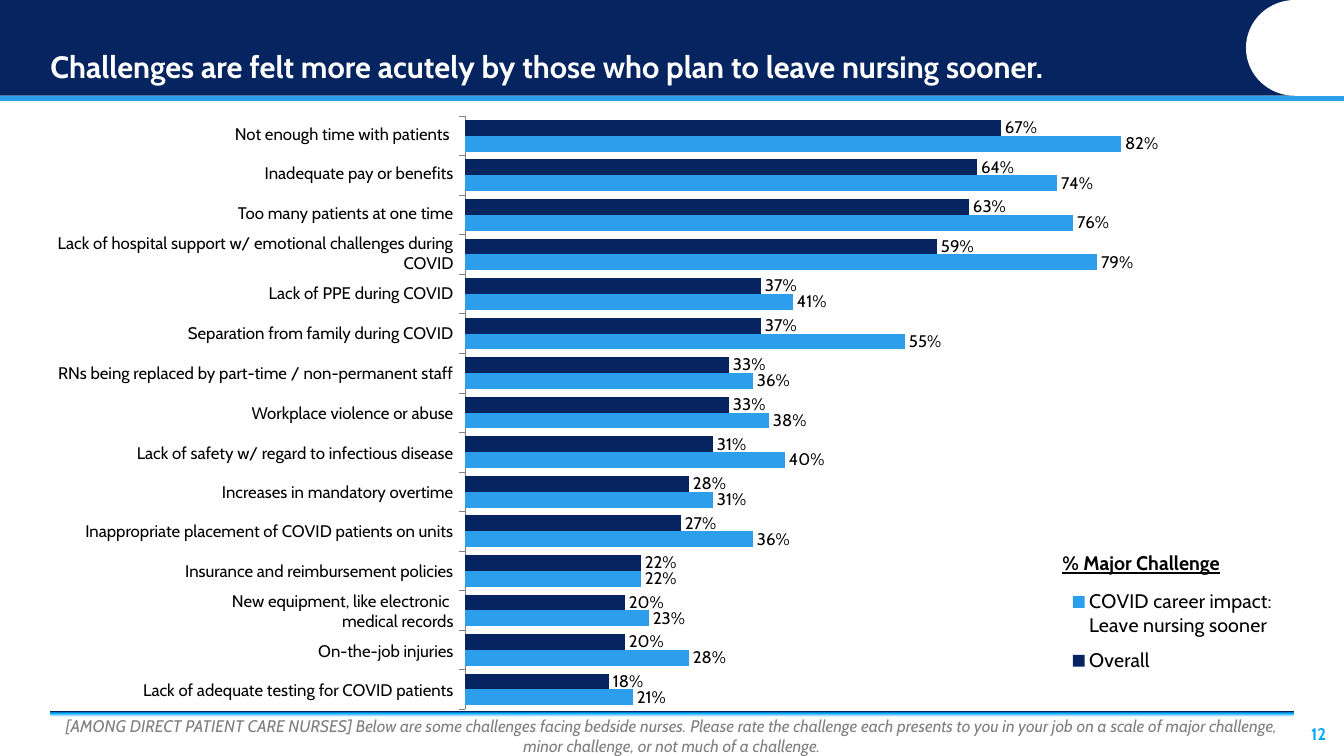
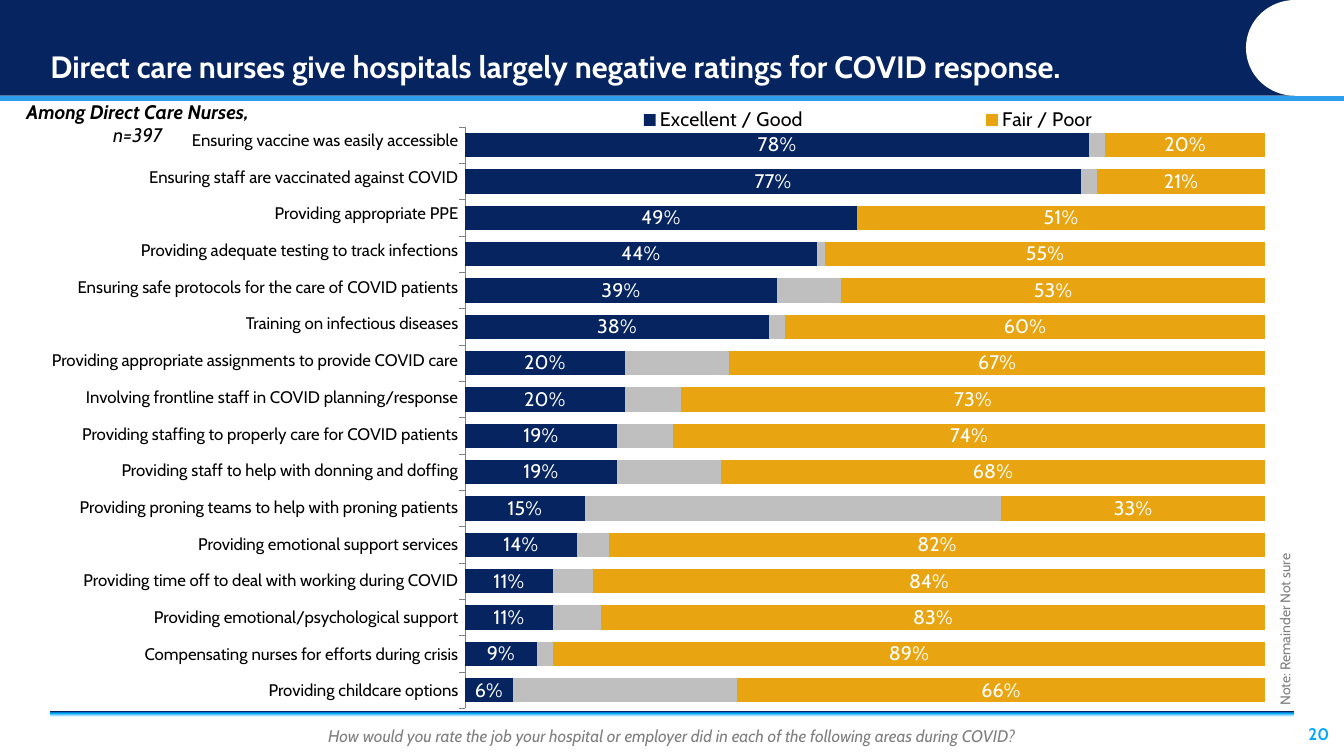
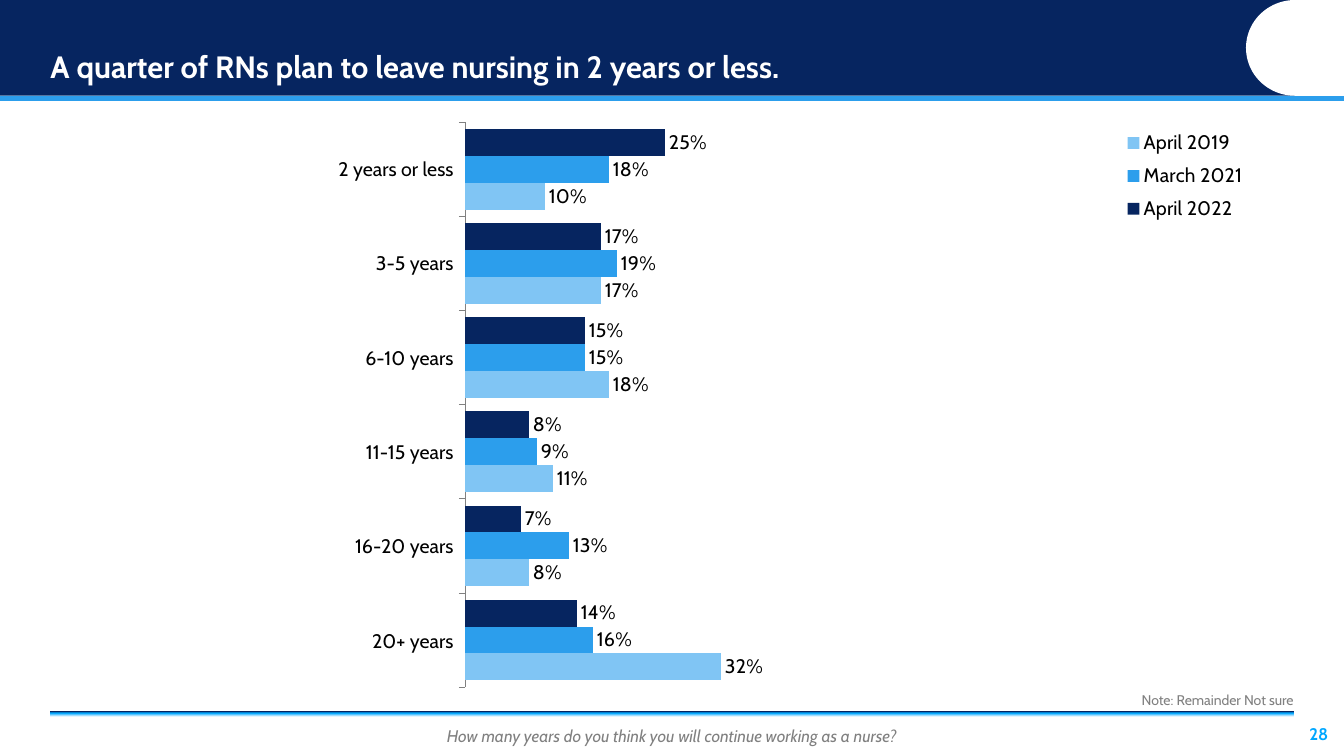
from lxml import etree
from pptx import Presentation
from pptx.chart.data import CategoryChartData
from pptx.dml.color import RGBColor
from pptx.enum import chart as ch, shapes, text
from pptx.oxml import parse_xml
from pptx.oxml.ns import nsdecls, qn
from pptx.util import Pt

FONT = "Cabin"
HUES = {
    "navy": "062560", "blue": "2C9EEC", "sky": "80C5F4", "gold": "E8A511",
    "silver": "BFBFBF", "gray": "808080", "cyan": "00A7FF", "pale": "CCEDFF",
    "white": "FFFFFF", "black": "000000",
}
RGB = {name: RGBColor.from_string(code) for name, code in HUES.items()}
FADE = [(0, "white"), (86, "white"), (88, "pale"), (94, "cyan"), (100, "navy")]
LEFT, RIGHT, MID, END = (text.PP_ALIGN.LEFT, text.PP_ALIGN.RIGHT,
                         text.PP_ALIGN.CENTER, ch.XL_LABEL_POSITION.OUTSIDE_END)


def style(frame, size, hue, align=LEFT, bold=False, italic=False,
          anchor=text.MSO_ANCHOR.MIDDLE, pads=(0, 0, 0, 0)):
    """Format a whole text frame; pads run left, top, right, bottom."""
    frame.word_wrap = True
    frame.auto_size = text.MSO_AUTO_SIZE.NONE
    frame.vertical_anchor = anchor
    (frame.margin_left, frame.margin_top,
     frame.margin_right, frame.margin_bottom) = map(Pt, pads)
    for para in frame.paragraphs:
        para.alignment = align
        font = para.font
        font.name, font.size, font.bold, font.italic = FONT, Pt(size), bold, italic
        font.color.rgb = RGB[hue]


def place(parent, index, inner, box):
    """Give a plot area or legend a fixed place, as parts of the chart."""
    for old in parent.findall(qn("c:layout")):
        parent.remove(old)
    target = '<c:layoutTarget val="inner"/>' if inner else ""
    sizes = "".join(f'<c:{key} val="{val}"/>' for key, val in zip("xywh", box))
    parent.insert(index, parse_xml(
        f'<c:layout {nsdecls("c")}><c:manualLayout>{target}<c:xMode val="edge"/>'
        f'<c:yMode val="edge"/>{sizes}</c:manualLayout></c:layout>'))


good = [78, 77, 49, 44, 39, 38, 20, 20, 19, 19, 15, 14, 11, 11, 9, 6]
poor = [20, 21, 51, 55, 53, 60, 67, 73, 74, 68, 33, 82, 84, 83, 89, 66]
rest = [100 - a - b for a, b in zip(good, poor)]

PAGES = [
    {
        "title": "Challenges are felt more acutely by those who plan to leave nursing sooner.",
        "foot": "[AMONG DIRECT PATIENT CARE NURSES] Below are some challenges facing "
                "bedside nurses. Please rate the challenge each presents to you in your job "
                "on a scale of major challenge, minor challenge, or not much of a challenge.",
        "page": 12,
        "names": [
            "Not enough time with patients ",
            "Inadequate pay or benefits",
            "Too many patients at one time",
            "Lack of hospital support w/ emotional challenges during COVID",
            "Lack of PPE during COVID",
            "Separation from family during COVID",
            "RNs being replaced by part-time / non-permanent staff",
            "Workplace violence or abuse",
            "Lack of safety w/ regard to infectious disease",
            "Increases in mandatory overtime",
            "Inappropriate placement of COVID patients on units",
            "Insurance and reimbursement policies",
            "New equipment, like electronic \nmedical records",
            "On-the-job injuries",
            "Lack of adequate testing for COVID patients",
        ],
        "grid": (36, 82, 288), "row": 28.1, "tall": {3: 29.5, 6: 29.5, 12: 29.5},
        "size": 12, "marks": 12,
        "kind": ch.XL_CHART_TYPE.BAR_CLUSTERED,
        "chart": (72, 435.6), "plot": (0.007, 0.025, 0.959, 0.973),
        "key": (0.725, 0.785, 0.26, 0.17),
        "bars": [
            ("Overall", "navy",
             [67, 64, 63, 59, 37, 37, 33, 33, 31, 28, 27, 22, 20, 20, 18]),
            ("COVID career impact: Leave nursing sooner", "blue",
             [82, 74, 76, 79, 41, 55, 36, 38, 40, 31, 36, 22, 23, 28, 21]),
        ],
    },
    {
        "title": "Direct care nurses give hospitals largely negative ratings for COVID response.",
        "foot": "How would you rate the job your hospital or employer did in each of the "
                "following areas during COVID?",
        "page": 20,
        "names": [
            "Ensuring vaccine was easily accessible",
            "Ensuring staff are vaccinated against COVID",
            "Providing appropriate PPE",
            "Providing adequate testing to track infections",
            "Ensuring safe protocols for the care of COVID patients",
            "Training on infectious diseases",
            "Providing appropriate assignments to provide COVID care",
            "Involving frontline staff in COVID planning/response",
            "Providing staffing to properly care for COVID patients",
            "Providing staff to help with donning and doffing",
            "Providing proning teams to help with proning patients",
            "Providing emotional support services",
            "Providing time off to deal with working during COVID",
            "Providing emotional/psychological support",
            "Compensating nurses for efforts during crisis",
            "Providing childcare options",
        ],
        "grid": (17.3, 87.1, 310.3), "row": 26.24, "tall": {}, "size": 12, "marks": 14,
        "kind": ch.XL_CHART_TYPE.BAR_STACKED_100,
        "chart": (77, 430), "plot": (0.007, 0.032, 0.959, 0.966),
        "key": (0.01, 0, 0.96, 0.04),
        "bars": [("Excellent / Good", "navy", good), ("Series 2", "silver", rest),
                 ("Fair / Poor", "gold", poor)],
    },
    {
        "title": "A quarter of RNs plan to leave nursing in 2 years or less.",
        "foot": "How many years do you think you will continue working as a nurse?",
        "page": 28,
        "names": ["2 years or less", "3-5 years", "6-10 years", "11-15 years",
                  "16-20 years", "20+ years"],
        "grid": (36, 87.1, 288), "row": 67.44, "tall": {}, "size": 14, "marks": 14,
        "kind": ch.XL_CHART_TYPE.BAR_CLUSTERED,
        "chart": (77, 414.7), "plot": (0.007, 0.025, 0.959, 0.973),
        "key": (0.79, 0.025, 0.16, 0.185),
        "bars": [("April 2022", "navy", [25, 17, 15, 8, 7, 14]),
                 ("March 2021", "blue", [18, 19, 15, 9, 13, 16]),
                 ("April 2019", "sky", [10, 17, 18, 11, 8, 32])],
    },
]

deck = Presentation()
deck.slide_width, deck.slide_height = Pt(960), Pt(540)
base = deck.slide_layouts[1]
slides = [deck.slides.add_slide(base) for _ in PAGES]

# Bands shared by every slide live on the layout
RECT = shapes.MSO_SHAPE.RECTANGLE
BANDS = [(RECT, 0, 0, 960, 68.4, "navy"), (RECT, 0, 68.4, 960, 3.6, "blue"),
         (shapes.MSO_SHAPE.FLOWCHART_DELAY, 890, 0, 70, 68.4, "white")]
for spot, (form, x, y, w, h, hue) in enumerate(BANDS, 2):
    band = slides[0].shapes.add_shape(form, Pt(x), Pt(y), Pt(w), Pt(h))
    band.shadow.inherit = False
    band.fill.solid()
    band.fill.fore_color.rgb = RGB[hue]
    band.line.fill.background()
    if form != RECT:
        band.element.xpath(".//a:xfrm")[0].set("flipH", "1")
    base.shapes.element.insert(spot, band.element)

for holder, box in zip(list(base.placeholders)[:2],
                       [(36, 7.2, 846, 54), (36, 507.6, 888, 32.4)]):
    holder.left, holder.top, holder.width, holder.height = map(Pt, box)

for slide, page in zip(slides, PAGES):
    title, foot = slide.shapes.title, slide.placeholders[1]
    title.text_frame.text = page["title"]
    title.text_frame.paragraphs[0].line_spacing = 0.9
    style(title.text_frame, 22, "white", bold=True, anchor=text.MSO_ANCHOR.BOTTOM)

    foot.text_frame.text = page["foot"]
    para = foot.text_frame.paragraphs[0]
    para.space_before = Pt(0)
    props = para._p.get_or_add_pPr()
    props.set("marL", "0")
    props.set("indent", "0")
    etree.SubElement(props, qn("a:buNone"))
    style(foot.text_frame, 12, "gray", MID, italic=True, pads=(0, 3.6, 0, 0))
    foot.fill.gradient()
    foot.fill.gradient_angle = 90
    stops = foot.element.xpath(".//a:gsLst")[0]
    for stop in list(stops):
        stops.remove(stop)
    for pos, hue in FADE:
        stop = etree.SubElement(stops, qn("a:gs"), pos=str(pos * 1000))
        etree.SubElement(stop, qn("a:srgbClr"), val=HUES[hue])

    num = slide.shapes.add_textbox(Pt(924), Pt(507.6), Pt(36), Pt(32.4))
    num.text_frame.text = str(page["page"])
    style(num.text_frame, 12, "cyan", MID, bold=True)

    # Bar chart
    names = page["names"]
    data = CategoryChartData(number_format="0%")
    data.categories = [str(i + 1) for i in range(len(names))]
    for name, hue, vals in page["bars"]:
        data.add_series(name, [val / 100 for val in vals])
    top, high = page["chart"]
    chart = slide.shapes.add_chart(page["kind"], Pt(327.6), Pt(top), Pt(596.4),
                                   Pt(high), data).chart
    chart.has_title = False
    chart.font.name, chart.font.size = FONT, Pt(14)
    chart.font.color.rgb = RGB["black"]
    stacked = page["kind"] == ch.XL_CHART_TYPE.BAR_STACKED_100
    plot = chart.plots[0]
    plot.gap_width, plot.overlap = 50, 100 if stacked else 0
    plot.vary_by_categories = False

    cats, vals = chart.category_axis, chart.value_axis
    cats.reverse_order = True
    cats.has_major_gridlines = vals.has_major_gridlines = False
    cats.tick_label_position = ch.XL_TICK_LABEL_POSITION.NONE
    cats.major_tick_mark = ch.XL_TICK_MARK.OUTSIDE
    cats.format.line.color.rgb = RGB["gray"]
    cats.format.line.width = Pt(0.5)
    vals.minimum_scale, vals.maximum_scale = 0, 1
    vals.visible = False

    for bar, (name, hue, _) in zip(plot.series, page["bars"]):
        bar.format.fill.solid()
        bar.format.fill.fore_color.rgb = RGB[hue]
        bar.invert_if_negative = False
        if hue == "silver":
            continue
        marks = bar.data_labels
        marks.show_value = True
        marks.number_format, marks.number_format_is_linked = "0%", False
        marks.position = ch.XL_LABEL_POSITION.CENTER if stacked else END
        marks.font.name, marks.font.size = FONT, Pt(page["marks"])
        marks.font.color.rgb = RGB["white" if stacked else "black"]

    chart.has_legend = True
    chart.legend.position = ch.XL_LEGEND_POSITION.TOP
    chart.legend.include_in_layout = False
    place(chart.element.xpath(".//c:plotArea")[0], 0, True, page["plot"])
    key = chart.element.xpath(".//c:legend")[0]
    place(key, 1, False, page["key"])
    if stacked:
        key.insert(1, parse_xml(f'<c:legendEntry {nsdecls("c")}><c:idx val="1"/>'
                                '<c:delete val="1"/></c:legendEntry>'))

    # Row names beside the bars
    x, y, w = page["grid"]
    steps = [page["tall"].get(i, page["row"]) for i in range(len(names))]
    table = slide.shapes.add_table(len(names), 1, Pt(x), Pt(y), Pt(w),
                                   Pt(sum(steps))).table
    table.first_row = table.horz_banding = False
    for i, (name, step) in enumerate(zip(names, steps)):
        table.rows[i].height = Pt(step)
        cell = table.cell(i, 0)
        cell.text = name
        cell.fill.background()
        cell.vertical_anchor = text.MSO_ANCHOR.MIDDLE
        cell.margin_left = cell.margin_right = cell.margin_top = cell.margin_bottom = 0
        for para in cell.text_frame.paragraphs:
            para.alignment = RIGHT
            para.font.name, para.font.size = FONT, Pt(page["size"])
            para.font.color.rgb = RGB["black"]

# Notes that belong to single slides
NOTE = "Note: Remainder Not sure"
TOP = text.MSO_ANCHOR.TOP
EXTRAS = [
    (0, (758.9, 393.8, 139, 17.3), "% Major Challenge", 14, "black",
     {"bold": True, "anchor": TOP}),
    (1, (906.5, 87.1, 22.3, 419.8), NOTE, 10, "gray", {"pads": (0, 2.9, 0, 2.9)}),
    (1, (9.4, 71.3, 177.8, 33.8), "Among Direct Care Nurses, ", 14, "black",
     {"align": MID, "bold": True, "italic": True, "anchor": TOP}),
    (2, (36, 492.5, 888, 15.1), NOTE, 10, "gray",
     {"align": RIGHT, "pads": (0, 2.9, 0, 2.9)}),
]
boxes = []
for index, box, words, size, hue, look in EXTRAS:
    item = slides[index].shapes.add_textbox(*map(Pt, box))
    item.text_frame.text = words
    style(item.text_frame, size, hue, **look)
    boxes.append(item)
head, side, group, _ = boxes
head.text_frame.paragraphs[0].font.underline = True
side.element.xpath(".//a:bodyPr")[0].set("vert", "vert270")
count = group.text_frame.paragraphs[0].add_run()
count.text = "n=397"
count.font.bold = False

deck.save("out.pptx")
